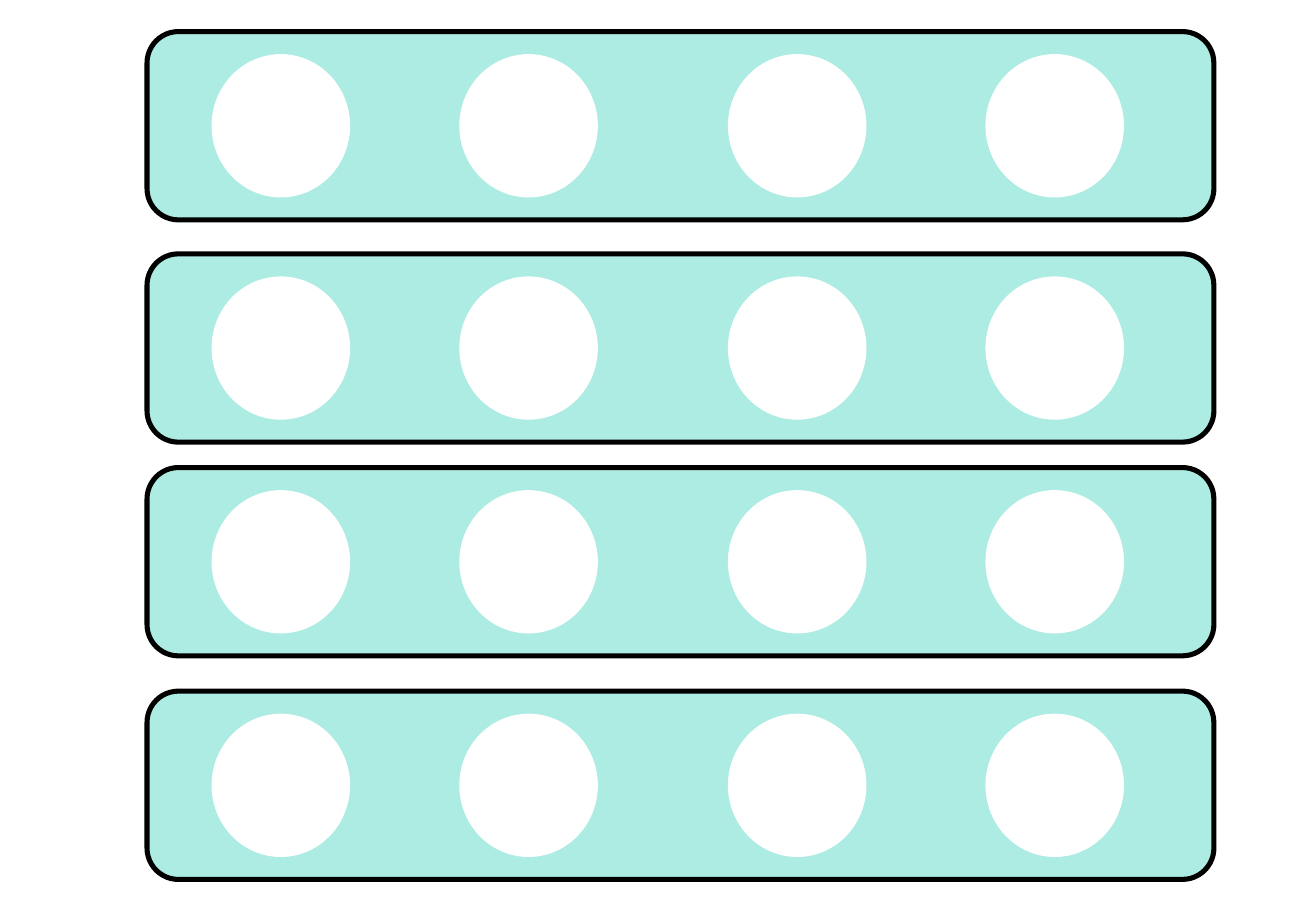
from pptx import Presentation, util as u
from pptx.dml.color import RGBColor
from pptx.enum import shapes

COLOURS = {"strip": "ACECE2", "outline": "000000", "hole": "FFFFFF"}

# Positions and sizes in percent of the slide's width or height
STRIP_LEFT, STRIP_WIDTH, STRIP_HEIGHT = 11.17, 81.07, 20.67
STRIP_TOPS = (3.47, 27.87, 51.33, 75.87)
HOLE_WIDTH, HOLE_HEIGHT = 10.53, 15.73
HOLE_LEFTS = (16.07, 34.9, 55.31, 74.88)


class StripSheet:
    """Draws strips and holes on one slide, in percent of its size."""

    def __init__(self, deck, colours):
        self.deck = deck
        self.colours = colours
        self.slide = deck.slides.add_slide(deck.slide_layouts[6])

    def _filled(self, kind, left, top, width, height, colour):
        across, down = self.deck.slide_width / 100, self.deck.slide_height / 100
        shape = self.slide.shapes.add_shape(
            kind, round(left * across), round(top * down),
            round(width * across), round(height * down))
        shape.shadow.inherit = False
        shape.fill.solid()
        shape.fill.fore_color.rgb = RGBColor.from_string(self.colours[colour])
        return shape

    def strip(self, top):
        strip = self._filled(shapes.MSO_SHAPE.ROUNDED_RECTANGLE, STRIP_LEFT, top,
                             STRIP_WIDTH, STRIP_HEIGHT, "strip")
        strip.line.color.rgb = RGBColor.from_string(self.colours["outline"])
        strip.line.width = u.Pt(3)

    def hole(self, left, top):
        hole = self._filled(shapes.MSO_SHAPE.OVAL, left, top,
                            HOLE_WIDTH, HOLE_HEIGHT, "hole")
        hole.line.fill.background()


def main():
    deck = Presentation()
    deck.slide_width, deck.slide_height = u.Inches(10.83), u.Inches(7.5)
    sheet = StripSheet(deck, COLOURS)

    # Four strips, each with a row of holes centred in its height
    for strip_top in STRIP_TOPS:
        sheet.strip(strip_top)
        hole_top = strip_top + (STRIP_HEIGHT - HOLE_HEIGHT) / 2
        for hole_left in HOLE_LEFTS:
            sheet.hole(hole_left, hole_top)

    deck.save("out.pptx")


if __name__ == "__main__":
    main()
